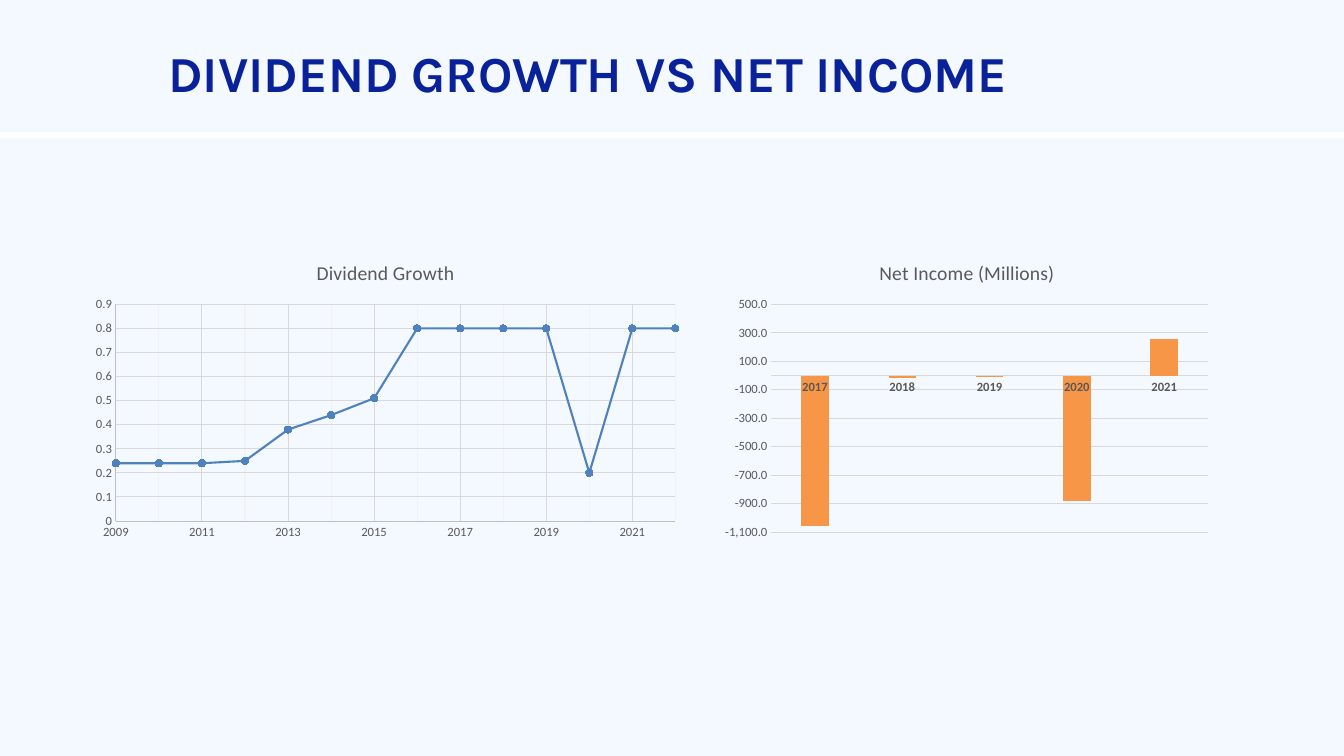
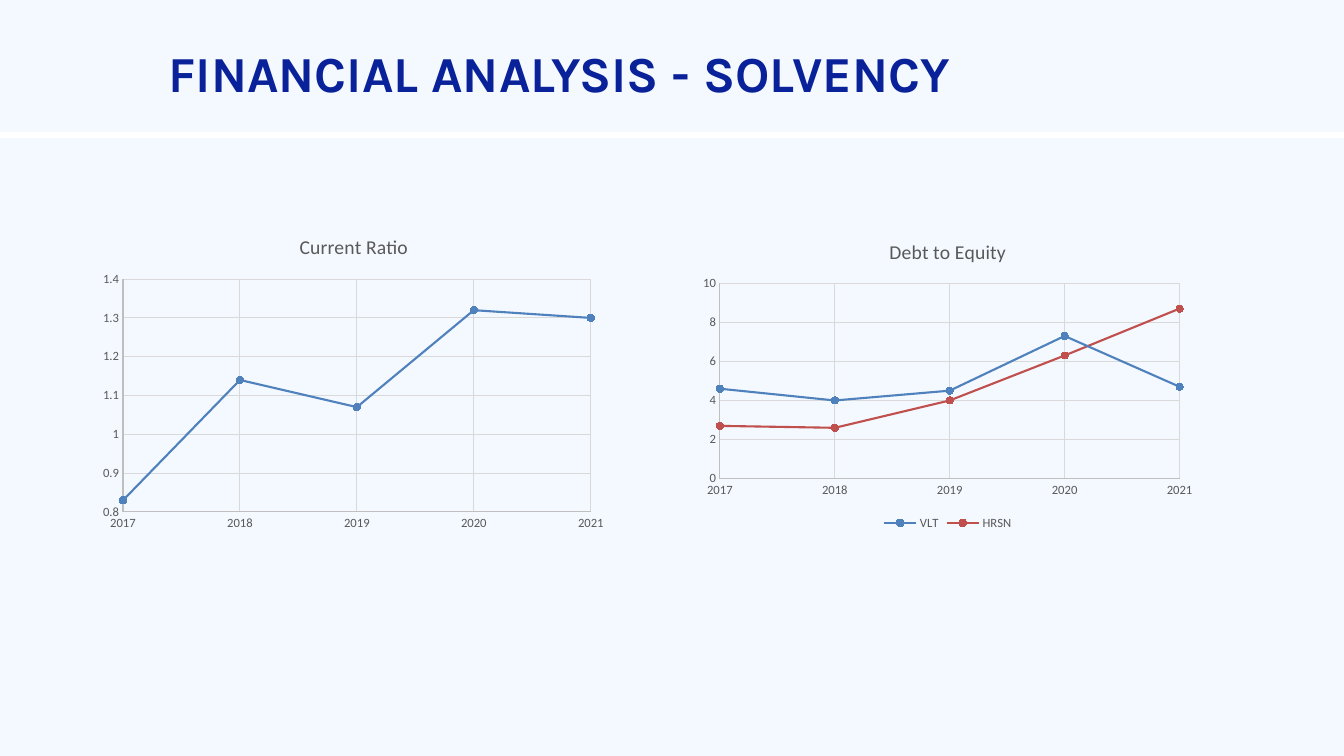
from pptx import Presentation
from pptx.chart.data import CategoryChartData, XyChartData
from pptx.dml.color import RGBColor
from pptx.enum.chart import XL_CHART_TYPE, XL_LEGEND_POSITION, XL_MARKER_STYLE, XL_TICK_MARK
from pptx.enum.shapes import MSO_SHAPE
from pptx.oxml import parse_xml
from pptx.oxml.ns import nsdecls, qn
from pptx.util import Inches, Pt

COLORS = {
    "panel": "F4F8FF", "title": "092199", "text": "595959",
    "axis": "BFBFBF", "grid": "D9D9D9", "minor_grid": "F2F2F2",
    "blue": "4F81BD", "red": "C0504D", "orange": "F79646",
}
TITLE_FONT, CHART_FONT = "Karla", "Calibri"
PAGE_WIDTH, PAGE_HEIGHT = 13.33, 7.5
HEADER_HEIGHT, HEADER_GAP = 1.31, 0.06


def color(name):
    return RGBColor.from_string(COLORS[name])


def set_line(line, name, width=0.75):
    line.color.rgb = color(name)
    line.width = Pt(width)


# Page: two pale panels and a title
def add_panel(page, top, height):
    panel = page.shapes.add_shape(MSO_SHAPE.RECTANGLE, 0, Inches(top),
                                  Inches(PAGE_WIDTH), Inches(height))
    panel.shadow.inherit = False
    panel.fill.solid()
    panel.fill.fore_color.rgb = color("panel")
    panel.line.fill.background()


def add_page(deck, title):
    page = deck.slides.add_slide(deck.slide_layouts[6])
    body_top = HEADER_HEIGHT + HEADER_GAP
    add_panel(page, 0, HEADER_HEIGHT)
    add_panel(page, body_top, PAGE_HEIGHT - body_top)

    box = page.shapes.add_textbox(Inches(1.67), Inches(0.42), Inches(10.84), Inches(0.61))
    frame = box.text_frame
    frame.word_wrap = True
    frame.margin_left = frame.margin_top = frame.margin_right = frame.margin_bottom = 0
    para = frame.paragraphs[0]
    para.text = title
    para.font.name = TITLE_FONT
    para.font.size = Pt(36)
    para.font.bold = True
    para.font.color.rgb = color("title")
    return page


# Chart parts
def place_plot(chart, box, plot):
    """Fix the inner plot area; both boxes are in inches on the page."""
    left, top, width, height = box
    shares = {"x": (plot[0] - left) / width, "y": (plot[1] - top) / height,
              "w": plot[2] / width, "h": plot[3] / height}
    modes = "".join(f'<c:{side}Mode val="edge"/>' for side in "xy")
    sizes = "".join(f'<c:{side} val="{share:.4f}"/>' for side, share in shares.items())
    area = chart.plots[0]._element.getparent()
    for layout in area.findall(qn("c:layout")):
        area.remove(layout)
    area.insert(0, parse_xml(
        f'<c:layout {nsdecls("c")}><c:manualLayout><c:layoutTarget val="inner"/>'
        f'{modes}{sizes}</c:manualLayout></c:layout>'))


def style_axis(axis, scale=None, line="axis", grid=True):
    axis.major_tick_mark = axis.minor_tick_mark = XL_TICK_MARK.NONE
    axis.has_major_gridlines = grid
    if grid:
        set_line(axis.major_gridlines.format.line, "grid")
    if line:
        set_line(axis.format.line, line)
    else:
        axis.format.line.fill.background()
    if scale:
        axis.minimum_scale, axis.maximum_scale, axis.major_unit = scale


def add_minor_grid(axis, unit):
    axis.minor_unit = unit
    axis.has_minor_gridlines = True
    axis._element.find(qn("c:minorGridlines")).append(parse_xml(
        f'<c:spPr {nsdecls("c", "a")}><a:ln w="{Pt(0.75)}"><a:solidFill>'
        f'<a:srgbClr val="{COLORS["minor_grid"]}"/></a:solidFill></a:ln></c:spPr>'))


def add_chart(page, kind, data, title, box, plot):
    chart = page.shapes.add_chart(kind, *map(Inches, box), data).chart
    chart.font.name = CHART_FONT
    chart.font.size = Pt(9)
    chart.font.color.rgb = color("text")
    chart.has_legend = False
    chart.has_title = True
    para = chart.chart_title.text_frame.paragraphs[0]
    para.text = title
    para.font.name = CHART_FONT
    para.font.size = Pt(14)
    para.font.bold = False
    para.font.color.rgb = color("text")
    chart.plots[0].vary_by_categories = False
    place_plot(chart, box, plot)
    return chart


# Chart types
def add_trend_chart(page, title, box, plot, years, lines, year_scale, value_scale):
    data = XyChartData()
    for name, values in lines.items():
        series = data.add_series(name)
        for year, value in zip(years, values):
            series.add_data_point(year, value)
    chart = add_chart(page, XL_CHART_TYPE.XY_SCATTER_LINES, data, title, box, plot)
    style_axis(chart.category_axis, year_scale)
    style_axis(chart.value_axis, value_scale)
    for series, name in zip(chart.plots[0].series, ("blue", "red")):
        series.smooth = False
        set_line(series.format.line, name, 1.5)
        series.marker.style = XL_MARKER_STYLE.CIRCLE
        series.marker.size = 5
        series.marker.format.fill.solid()
        series.marker.format.fill.fore_color.rgb = color(name)
        set_line(series.marker.format.line, name)
    if len(lines) > 1:
        chart.has_legend = True
        chart.legend.position = XL_LEGEND_POSITION.BOTTOM
        chart.legend.include_in_layout = False
    return chart


def add_income_chart(page, title, box, plot, years, values):
    data = CategoryChartData()
    data.categories = [str(year) for year in years]
    data.add_series(title, values)
    chart = add_chart(page, XL_CHART_TYPE.COLUMN_CLUSTERED, data, title, box, plot)
    style_axis(chart.category_axis, line="grid", grid=False)
    chart.category_axis.tick_labels.font.bold = True
    style_axis(chart.value_axis, (-1100, 500, 200), line=None)
    labels = chart.value_axis.tick_labels
    labels.number_format = "#,##0.0"
    labels.number_format_is_linked = False
    columns = chart.plots[0]
    columns.gap_width, columns.overlap = 219, -27
    series = columns.series[0]
    series.invert_if_negative = False
    series.format.fill.solid()
    series.format.fill.fore_color.rgb = color("orange")


# Slides
def add_dividend_page(deck):
    page = add_page(deck, "DIVIDEND GROWTH VS NET INCOME")
    dividends = [0.24, 0.24, 0.24, 0.25, 0.38, 0.44, 0.51, 0.8, 0.8, 0.8, 0.8, 0.2, 0.8, 0.8]
    chart = add_trend_chart(
        page, "Dividend Growth", (0.83, 2.42, 5.99, 3), (1.15, 3.02, 5.55, 2.15),
        range(2009, 2023), {"Dividend Growth": dividends}, (2009, 2022, 2), (0, 0.9, 0.1))
    add_minor_grid(chart.category_axis, 1)
    add_income_chart(
        page, "Net Income (Millions)", (7.09, 2.42, 5, 3), (7.65, 3.02, 4.33, 2.26),
        range(2017, 2022), [-1060, -20, -10, -880, 260])


def add_solvency_page(deck):
    page = add_page(deck, "FINANCIAL ANALYSIS - SOLVENCY")
    years, year_scale = range(2017, 2022), (2017, 2021, 1)
    add_trend_chart(
        page, "Current Ratio", (0.92, 2.16, 5.18, 3.17), (1.22, 2.77, 4.64, 2.31),
        years, {"Current Ratio": [0.83, 1.14, 1.07, 1.32, 1.3]}, year_scale, (0.8, 1.4, 0.1))
    debt = {"VLT": [4.6, 4, 4.5, 7.3, 4.7], "HRSN": [2.7, 2.6, 4, 6.3, 8.7]}
    add_trend_chart(
        page, "Debt to Equity", (6.87, 2.21, 5.06, 3.09), (7.14, 2.81, 4.56, 1.94),
        years, debt, year_scale, (0, 10, 2))


def main():
    deck = Presentation()
    deck.slide_width, deck.slide_height = Inches(PAGE_WIDTH), Inches(PAGE_HEIGHT)
    add_dividend_page(deck)
    add_solvency_page(deck)
    deck.save("out.pptx")


if __name__ == "__main__":
    main()
